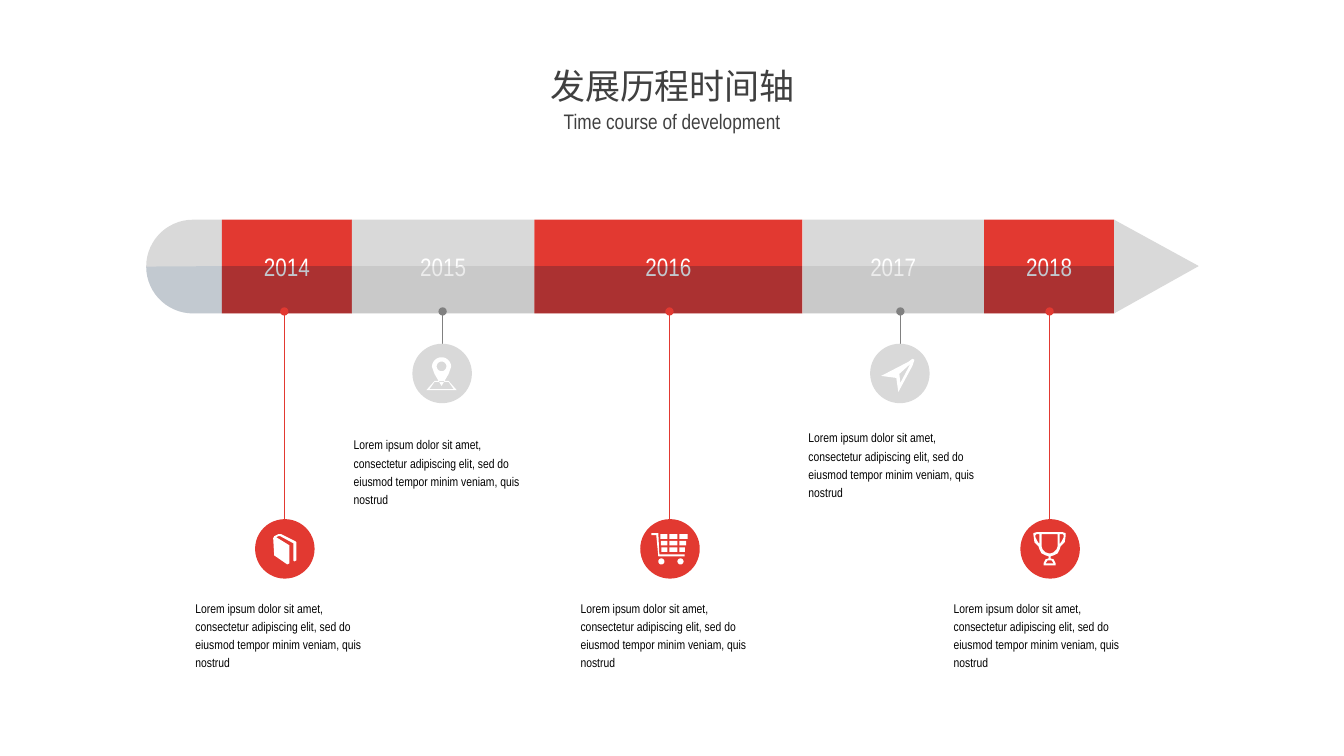
from math import cos, radians, sin

from lxml import etree
from pptx import Presentation
from pptx.dml.color import RGBColor
from pptx.enum.shapes import MSO_CONNECTOR, MSO_SHAPE
from pptx.enum.text import MSO_ANCHOR, MSO_AUTO_SIZE, PP_ALIGN
from pptx.oxml.ns import qn
from pptx.util import Pt

PX = 9144  # 100 px to the inch
RECT, OVAL = MSO_SHAPE.RECTANGLE, MSO_SHAPE.OVAL
LINE = MSO_CONNECTOR.STRAIGHT
LEFT, CENTER = PP_ALIGN.LEFT, PP_ALIGN.CENTER
MIDDLE = MSO_ANCHOR.MIDDLE
GROW = MSO_AUTO_SIZE.SHAPE_TO_FIT_TEXT
FONT = "Arial Narrow"
COLORS = {
    "red": "E23931", "gray": "D9D9D9", "stem": "808080", "dark": "404040",
    "navy": "001932", "blue": "004386", "white": "FFFFFF", "black": "000000",
}
LOREM = ("Lorem ipsum dolor sit amet, consectetur adipiscing elit, sed do "
         "eiusmod tempor minim veniam, quis nostrud")

# Bar geometry
TOP, MID, END = 218, 264, 311
DISC = 59

# Year, bar left, bar right, color, stem x, disc top, note left, note top
STEPS = [
    ("2014", 220, 349, "red", 282, 515, 184, 588),
    ("2015", 349, 530, "gray", 439, 341, 341, 426),
    ("2016", 530, 796, "red", 664, 515, 566, 588),
    ("2017", 796, 976, "gray", 893, 341, 792, 419),
    ("2018", 976, 1105, "red", 1041, 515, 936, 588),
]


def rgb(name):
    return RGBColor.from_string(COLORS[name])


def paint(shape, color, alpha=None):
    shape.shadow.inherit = False
    shape.line.fill.background()
    shape.fill.solid()
    shape.fill.fore_color.rgb = rgb(color)
    if alpha:
        tone = shape.fill._xPr.find(".//" + qn("a:srgbClr"))
        etree.SubElement(tone, qn("a:alpha"), val=str(alpha * 1000))


def block(slide, kind, x, y, w, h, color, alpha=None):
    shape = slide.shapes.add_shape(kind, x * PX, y * PX, w * PX, h * PX)
    paint(shape, color, alpha)
    return shape


def outline(slide, loops, color, alpha=None, dx=0, dy=0):
    """Fill closed loops as one shape; inner loops become holes."""
    pen = None
    for loop in loops:
        first, *rest = [((x + dx) * PX, (y + dy) * PX) for x, y in loop]
        if pen is None:
            pen = slide.shapes.build_freeform(*first, scale=1.0)
        else:
            pen.move_to(*first)
        pen.add_line_segments(rest, close=True)
    paint(pen.convert_to_shape(), color, alpha)


def write(frame, text, size, color, align):
    para = frame.paragraphs[0]
    para.text = text
    para.alignment = align
    font = para.font
    font.name, font.size = FONT, Pt(size)
    font.color.rgb = rgb(color)
    return para


def label(slide, x, y, w, h, text, size, color, align=LEFT, space=None):
    box = slide.shapes.add_textbox(x * PX, y * PX, w * PX, h * PX)
    frame = box.text_frame
    frame.word_wrap = True
    frame.auto_size = GROW
    write(frame, text, size, color, align).line_spacing = space


def stem(slide, x, y, color):
    line = slide.shapes.add_connector(LINE, x * PX, y * PX, x * PX, 309 * PX)
    line.line.color.rgb = rgb(color)
    line.line.width = Pt(0.5)
    etree.SubElement(line.line._get_or_add_ln(), qn("a:tailEnd"), type="oval")
    etree.SubElement(line._element.spPr, qn("a:effectLst"))


def arc(x, y, r, start=0, stop=360):
    turns = [radians(a) for a in range(start, stop + 1, 6)]
    return [(x + r * cos(t), y + r * sin(t)) for t in turns]


def mirror(half):
    """Close a right-hand half with its reflection in the disc's axis."""
    return half + [(58 - x, y) for x, y in reversed(half)]


# Icons: loops measured from the top left of their disc
def book():
    return [[(40, 22), (26, 15), (23, 15), (19, 17), (18, 19), (19, 36),
             (32, 45), (34, 44), (34, 26), (21, 18), (23, 17), (25, 17),
             (38, 24), (38, 41), (39, 42), (41, 41), (41, 23)]]


def marker():
    sheet = mirror([(33, 37), (36, 37), (44, 46)])
    inner = mirror([(33, 38), (36, 38), (41, 45)])
    drop = arc(29, 23, 9.5, 180, 360) + [(36, 30), (29, 42), (22, 30)]
    return [sheet, inner, drop, arc(29, 22.5, 4.8)]


def plane():
    return [[(40, 20), (30, 39), (29, 30)],
            [(44, 16), (42, 15), (38, 18), (11, 32), (26, 34), (28, 48),
             (42, 22)]]


def cart():
    loops = [arc(21, 42, 3), arc(40, 42, 3),
             [(11, 14), (18, 14), (19, 35), (44, 35), (44, 37), (18, 37),
              (16, 16), (11, 16)]]
    for row in range(3):
        top, low = 15 + 6.5 * row, 19.5 + 6.5 * row
        for a, b in ((20 + row / 2, 27), (29, 37), (39, 47 - 1.3 * row)):
            loops.append([(a, top), (b, top), (b, low), (a, low)])
    return loops


def cup():
    body = [(42, 13), (45, 14), (45, 16), (44, 23), (40, 27), (39, 30),
            (37, 34), (33, 36), (30, 37), (30, 39), (33, 40), (35, 44),
            (35, 46)]
    bowl = [(37, 15), (37, 27), (36, 30), (33, 33), (30, 34)]
    ear = [(39, 15), (42, 15), (43, 16), (43, 18), (41, 22), (39, 25)]
    foot = [(31, 41), (33, 44)]
    return [mirror(body), mirror(bowl), ear,
            [(58 - x, y) for x, y in ear], mirror(foot)]


ICONS = [book, marker, cart, plane, cup]


def bar(slide):
    # Round cap with its shaded lower half
    cap = arc(191.5, 264.5, 46.5, 90, 270) + [(220, TOP), (220, END)]
    shade = arc(191.5, 264.5, 46.5, 90, 180) + [(220, MID), (220, END)]
    outline(slide, [cap], "gray")
    outline(slide, [shade], "blue", 10)
    # Year blocks
    for year, left, right, color, *_ in STEPS:
        wide = right - left
        box = block(slide, RECT, left, TOP, wide, END - TOP, color)
        box.text_frame.vertical_anchor = MIDDLE
        write(box.text_frame, year, 18, "white", CENTER)
        tint = ("navy", 24) if color == "red" else ("dark", 10)
        block(slide, RECT, left, MID, wide, END - MID, *tint)
    # Arrow tip
    outline(slide, [[(1105, TOP), (1189, MID), (1105, END)]], "gray")


def step(slide, color, x, top, left, note, icon):
    red = color == "red"
    stem(slide, x, 544 if red else 354, "red" if red else "stem")
    edge = x - DISC // 2 - (0 if red else 1)
    block(slide, OVAL, edge, top, DISC, DISC, color)
    outline(slide, icon(), "white", dx=edge, dy=top)
    label(slide, left, note, 201, 63, LOREM, 9, "black", space=1.2)


def main():
    deck = Presentation()
    deck.slide_width, deck.slide_height = 1333 * PX, 750 * PX
    slide = deck.slides.add_slide(deck.slide_layouts[6])
    bar(slide)
    for (_, _, _, *place), icon in zip(STEPS, ICONS):
        step(slide, *place, icon)
    # Headings
    label(slide, 499, 59, 336, 52, "发展历程时间轴", 25, "dark", CENTER)
    label(slide, 446, 103, 441, 35, "Time course of development", 15,
          "dark", CENTER)
    deck.save("out.pptx")


if __name__ == "__main__":
    main()
